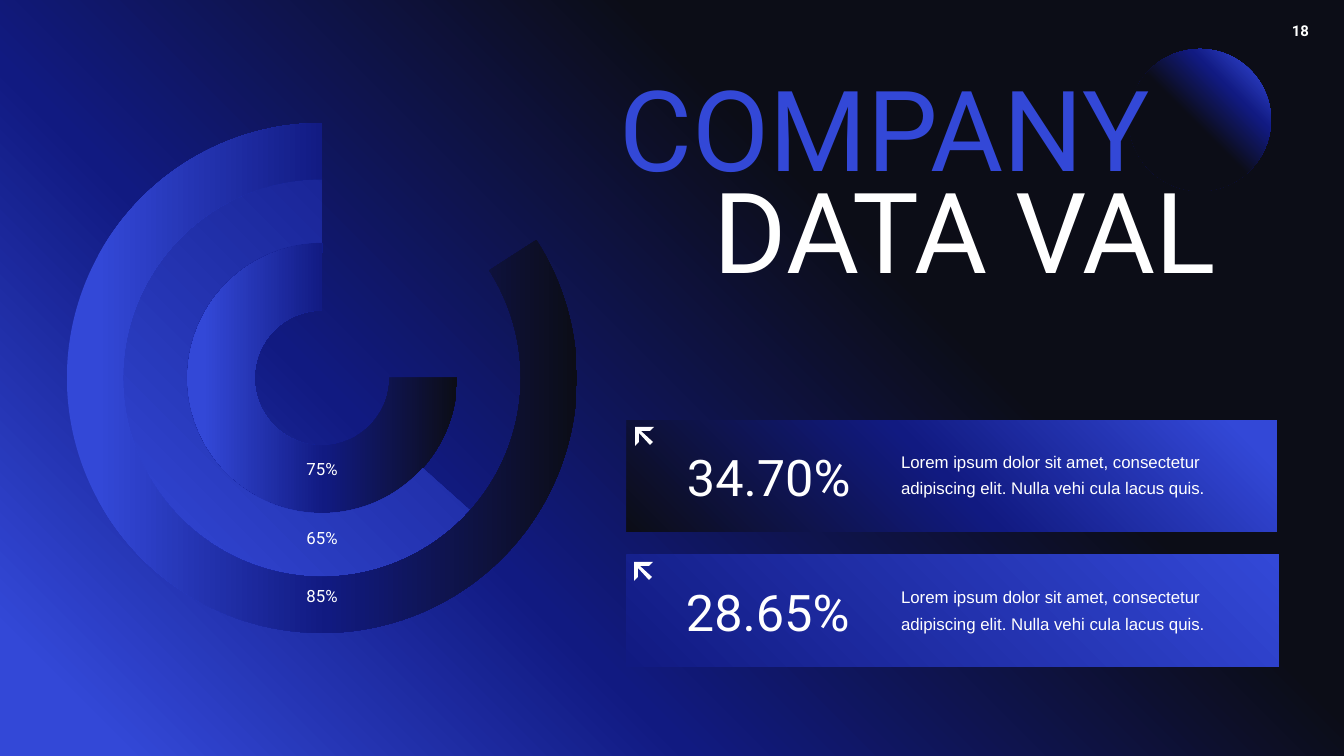
from lxml.etree import SubElement
from pptx import Presentation
from pptx.dml.color import RGBColor
from pptx.enum.shapes import MSO_SHAPE
from pptx.enum.text import MSO_AUTO_SIZE, PP_ALIGN
from pptx.oxml.ns import qn
from pptx.util import Pt

SCALE = 914400 / 134.4
COLORS = {"blue": "3348D7", "navy": "111A81", "black": "0C0D17", "white": "FFFFFF"}
BACKDROP = [(0, "blue"), (6, "blue"), (33, "navy"), (66, "black"), (100, "black")]
DEEP = [(0, "blue"), (6, "blue"), (51, "navy"), (100, "black")]
BRIGHT = [(0, "navy"), (100, "blue")]
ORB = [(0, "blue"), (6, "blue"), (29, "navy"), (53, "black"), (100, "black")]
ARROW = [(0, 0), (19, 0), (15, 4), (6, 4), (18, 15), (15, 18), (4, 6), (4, 15), (0, 19)]
BLURB = "Lorem ipsum dolor sit amet, consectetur adipiscing elit. Nulla vehi cula lacus quis."


def px(value):
    return round(value * SCALE)


class Slide:
    """Holds the deck, its current page and the style of every element."""

    def __init__(self, width, height):
        self.deck = Presentation()
        self.deck.slide_width, self.deck.slide_height = px(width), px(height)
        self.page = self.deck.slides.add_slide(self.deck.slide_layouts[6])

    def gradient(self, owner, fill, stops, angle):
        fill.gradient()
        fill.gradient_angle = (360 - angle) % 360
        stop_list = owner.find(".//" + qn("a:gsLst"))
        for stop in list(stop_list):
            stop_list.remove(stop)
        for position, color in stops:
            stop = SubElement(stop_list, qn("a:gs"), pos=str(position * 1000))
            SubElement(stop, qn("a:srgbClr"), val=COLORS[color])

    def background(self, stops, angle):
        self.gradient(self.page._element, self.page.background.fill, stops, angle)

    def shape(self, kind, left, top, width, height, stops, angle):
        shape = self.page.shapes.add_shape(kind, px(left), px(top), px(width), px(height))
        shape.shadow.inherit = False
        shape.line.fill.background()
        self.gradient(shape._element, shape.fill, stops, angle)
        return shape

    def ring(self, center, radius, start, thickness, stops, angle):
        x, y = center
        ring = self.shape(MSO_SHAPE.BLOCK_ARC, x - radius, y - radius, 2 * radius, 2 * radius, stops, angle)
        for index, value in enumerate((start * 0.6, 270 * 0.6, thickness)):
            ring.adjustments[index] = value

    def text(self, words, left, top, width, height, size, color="white", font="Roboto",
             bold=False, align=PP_ALIGN.LEFT, spacing=None):
        box = self.page.shapes.add_textbox(px(left), px(top), px(width), px(height))
        frame = box.text_frame
        frame.word_wrap = True
        frame.auto_size = MSO_AUTO_SIZE.SHAPE_TO_FIT_TEXT
        frame.margin_left = frame.margin_right = px(10)
        frame.margin_top = frame.margin_bottom = px(5)
        para = frame.paragraphs[0]
        para.text = words
        para.alignment = align
        para.line_spacing = spacing
        para.font.name, para.font.size, para.font.bold = font, Pt(size), bold
        para.font.color.rgb = RGBColor.from_string(COLORS[color])

    def arrow(self, left, top):
        points = [(left + x, top + y) for x, y in ARROW]
        builder = self.page.shapes.build_freeform(*points[0], scale=SCALE)
        builder.add_line_segments(points[1:], close=True)
        arrow = builder.convert_to_shape()
        arrow.shadow.inherit = False
        arrow.line.fill.background()
        arrow.fill.solid()
        arrow.fill.fore_color.rgb = RGBColor.from_string(COLORS["white"])

    def card(self, left, top, width, value, stops, angle):
        self.shape(MSO_SHAPE.RECTANGLE, left, top, width, 112, stops, angle)
        self.text(BLURB, 891, top + 21, 342, 62, 9, font="Arial", spacing=1.3)
        self.text(value, left + 50, top + 21, 223, 71, 27)
        self.arrow(left + 8, top + 7)


def main():
    slide = Slide(1344, 756)
    slide.background(BACKDROP, 315)
    slide.text("18", 1282, 17, 40, 28, 8, bold=True)

    center = (322, 378)
    slide.ring(center, 135, 0, 0.25, DEEP, 0)
    slide.ring(center, 199, 41.82, 0.16, BRIGHT, 135)
    slide.ring(center, 255, 327.25, 0.11, DEEP, 0)
    for words, top in (("75%", 454), ("65%", 523), ("85%", 581)):
        slide.text(words, 280, top, 84, 34, 9, align=PP_ALIGN.CENTER)

    slide.shape(MSO_SHAPE.OVAL, 1129, 49, 142, 142, ORB, 135)
    slide.text("COMPANY", 610, 55, 679, 146, 60, color="blue")
    slide.text("DATA VAL", 704, 157, 587, 146, 60)

    slide.card(627, 420, 650, "34.70%", DEEP, 135)
    slide.card(626, 555, 653, "28.65%", BRIGHT, 315)
    slide.deck.save("out.pptx")


if __name__ == "__main__":
    main()
